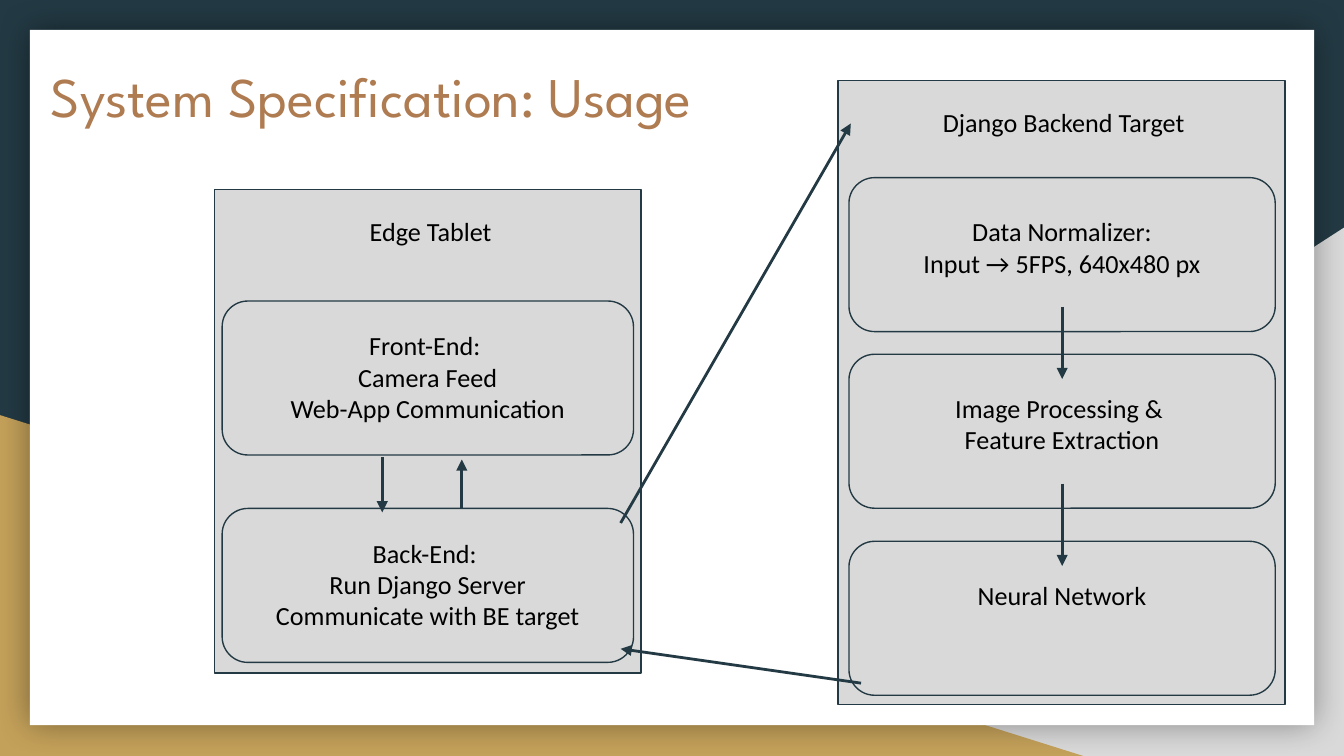
from lxml import etree
from pptx import Presentation
from pptx.dml.color import RGBColor
from pptx.enum import shapes as kinds, text as txt
from pptx.oxml import ns
from pptx.util import Pt

COLORS = {"ink": "233A44", "gray": "D9D9D9", "gold": "C4A15A",
          "white": "FFFFFF", "black": "000000", "copper": "AF7B51"}
KIND = kinds.MSO_SHAPE
INSETS = {f"margin_{side}": Pt(7.2) for side in ("left", "top", "right", "bottom")}
FRAME = {"word_wrap": True, "vertical_anchor": txt.MSO_ANCHOR.TOP,
         "auto_size": txt.MSO_AUTO_SIZE.NONE, **INSETS}


def add_block(kind, box, color, line=None):
    block = slide.shapes.add_shape(kind, *map(Pt, box))
    block.shadow.inherit = False
    block.fill.solid()
    block.fill.fore_color.rgb = RGBColor.from_string(COLORS[color])
    if line:
        block.line.color.rgb = RGBColor.from_string(COLORS[line])
        block.line.width = Pt(0.75)
    else:
        block.line.fill.background()
    return block


def write(shape, lines, font, size, color, align):
    frame = shape.text_frame
    for name, value in FRAME.items():
        setattr(frame, name, value)
    frame.text = "\n".join(lines)
    for paragraph in frame.paragraphs:
        paragraph.alignment = align
        for name, value in {"name": font, "size": Pt(size), "bold": False}.items():
            setattr(paragraph.font, name, value)
        paragraph.font.color.rgb = RGBColor.from_string(COLORS[color])


prs = Presentation()
prs.slide_width, prs.slide_height = Pt(720), Pt(405)
slide = prs.slides.add_slide(prs.slide_layouts[5])

# Backdrop: dark ground, two corner triangles, white card with a soft shadow
slide.background.fill.solid()
slide.background.fill.fore_color.rgb = RGBColor.from_string(COLORS["ink"])
gray_corner = add_block(KIND.RIGHT_TRIANGLE, (282, 122, 438, 283), "gray")
gray_corner._element.spPr.xfrm.set("flipH", "1")
add_block(KIND.RIGHT_TRIANGLE, (0, 222.4, 580.3, 182.6), "gold")
card = add_block(KIND.RECTANGLE, (16, 16, 688, 372.5), "white")
effects = card._element.spPr.find(ns.qn("a:effectLst"))
shadow = etree.SubElement(effects, ns.qn("a:outerShdw"), blurRad=str(Pt(18)),
                          dist="0", algn="ctr", rotWithShape="0")
shade = etree.SubElement(shadow, ns.qn("a:srgbClr"), val=COLORS["black"])
etree.SubElement(shade, ns.qn("a:alpha"), val="40000")

# Title, brought in front of the card
title = slide.shapes.title
for name, value in zip(("left", "top", "width", "height"), (20, 26, 591, 75)):
    setattr(title, name, Pt(value))
write(title, ["System Specification: Usage"], "League Spartan", 30, "copper",
      txt.PP_ALIGN.LEFT)
card._element.addnext(title._element)

# Systems: panel, heading, module column (left, width), label size, modules by top
MODULE_HEIGHT = 82.5
systems = [
    ((449, 43.2, 239.4, 334.4), "Django Backend Target", (455.8, 49.7, 228.2, 33),
     (454.8, 228.4), (211.8, 56),
     [(95.2, ["Data Normalizer:", "Input → 5FPS, 640x480 px"]),
      (189.8, ["Image Processing & ", "Feature Extraction"]),
      (290, ["Neural Network"])]),
    ((114.8, 101.5, 228.6, 259), "Edge Tablet", (121.7, 108, 218, 44),
     (119, 220.4), (206.6, 66.2),
     [(161.3, ["Front-End: ", "Camera Feed", "Web-App Communication"]),
      (272.4, ["Back-End: ", "Run Django Server", "Communicate with BE target"])]),
]
labels = {}
for panel, heading, heading_box, (left, width), (label_w, label_h), modules in systems:
    add_block(KIND.RECTANGLE, panel, "gray", "ink")
    entries = [(heading_box, [heading])]
    for top, lines in modules:
        add_block(KIND.ROUNDED_RECTANGLE, (left, top, width, MODULE_HEIGHT), "gray", "ink")
        label_box = (left + (width - label_w) / 2, top + (MODULE_HEIGHT - label_h) / 2,
                     label_w, label_h)
        entries.append((label_box, lines))
    for box, lines in entries:
        label = slide.shapes.add_textbox(*map(Pt, box))
        write(label, lines, "Calibri", 14, "black", txt.PP_ALIGN.CENTER)
        labels[lines[0].strip(" :")] = label

# Arrows: start, end, and the label sides they join
BOTTOM, TOP, LEFT = 2, 0, 1
arrows = [
    ((568.9, 164.5), (568.9, 203), ("Data Normalizer", BOTTOM), ("Image Processing &", TOP)),
    ((568.9, 259), (568.9, 303.2), ("Image Processing &", BOTTOM), ("Neural Network", TOP)),
    ((332.5, 280.2), (455.8, 66.2), None, ("Django Backend Target", LEFT)),
    ((461.3, 366), (332.5, 347.6), None, None),
    ((247.4, 272.4), (247.4, 246.2), None, None),
    ((204.8, 244.8), (204.8, 274.5), None, None),
]
for start, end, source, target in arrows:
    arrow = slide.shapes.add_connector(kinds.MSO_CONNECTOR.STRAIGHT, *map(Pt, start + end))
    if source:
        arrow.begin_connect(labels[source[0]], source[1])
    if target:
        arrow.end_connect(labels[target[0]], target[1])
    arrow.line.width = Pt(1.5)
    arrow.line.color.rgb = RGBColor.from_string(COLORS["ink"])
    etree.SubElement(arrow.line._get_or_add_ln(), ns.qn("a:tailEnd"), type="triangle")
    etree.SubElement(arrow._element.spPr, ns.qn("a:effectLst"))

prs.save("out.pptx")
